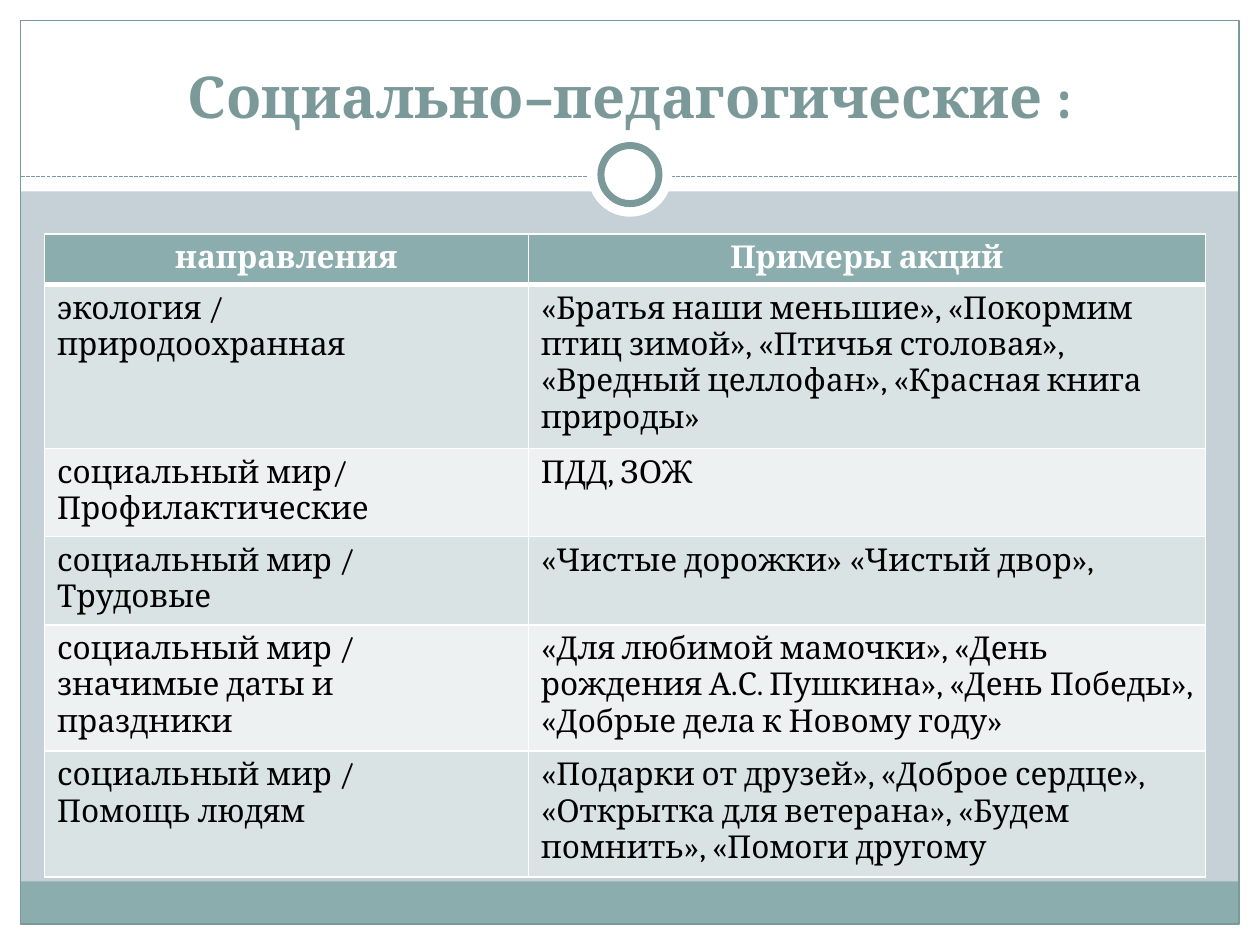
import pptx
import pptx.util
import pptx.dml.color
import pptx.enum.dml
import pptx.enum.shapes
import pptx.enum.text
import pptx.oxml
import pptx.oxml.ns
from pptx.util import Cm

RGBColor = pptx.dml.color.RGBColor
SHAPE = pptx.enum.shapes.MSO_SHAPE
ALIGN = pptx.enum.text.PP_ALIGN

WHITE = RGBColor(0xFF, 0xFF, 0xFF)
BLACK = RGBColor(0, 0, 0)
MIST = RGBColor(0xC5, 0xD1, 0xD7)
TEAL = RGBColor(0x8C, 0xAD, 0xAE)
DARK_TEAL = RGBColor(0x7C, 0x99, 0x9A)
BAND_DARK = RGBColor(0xDA, 0xE3, 0xE3)
BAND_LIGHT = RGBColor(0xEE, 0xF1, 0xF2)
FONT = "Cambria"

WIDTH, HEIGHT, MARGIN = 25.4, 19.05, 0.42
HEADERS = ("направления", "Примеры акций")
ACTIONS = [
    (("экология /", "природоохранная"),
     "«Братья наши меньшие», «Покормим птиц зимой», «Птичья столовая», "
     "«Вредный целлофан», «Красная книга природы»"),
    (("социальный мир/", "Профилактические"), "ПДД, ЗОЖ"),
    (("социальный мир /", "Трудовые"), "«Чистые дорожки» «Чистый двор»,"),
    (("социальный мир /", "значимые даты и праздники"),
     "«Для любимой мамочки», «День рождения А.С. Пушкина», «День Победы», "
     "«Добрые дела к Новому году»"),
    (("социальный мир /", "Помощь людям"),
     "«Подарки от друзей», «Доброе сердце», «Открытка для ветерана», "
     "«Будем помнить», «Помоги другому"),
]


def add_figure(s, kind, box, fill=None, line=None, weight=0.75):
    """Add a preset shape with a plain fill and outline."""
    sp = s.shapes.add_shape(kind, *map(Cm, box))
    sp.shadow.inherit = False
    if fill is None:
        sp.fill.background()
    else:
        sp.fill.solid()
        sp.fill.fore_color.rgb = fill
    if line is None:
        sp.line.fill.background()
    else:
        sp.line.color.rgb = line
        sp.line.width = pptx.util.Pt(weight)


def write_lines(tf, lines, size, color, bold=False, align=ALIGN.LEFT):
    """Write each line as a paragraph of one run."""
    for i, text in enumerate(lines):
        p = tf.add_paragraph() if i else tf.paragraphs[0]
        p.alignment = align
        r = p.add_run()
        r.text = text
        r.font.name = FONT
        r.font.size = pptx.util.Pt(size)
        r.font.bold = bold
        r.font.color.rgb = color


def add_frame(s, box, margin):
    """Draw white margins, the bottom band and the outline."""
    x, y, w, h = box
    band = 0.86
    for strip in ((x, y + h - margin, w, margin), (x, y, w, 3.86),
                  (x, y, margin, h), (x + w - margin, y, margin, h)):
        add_figure(s, SHAPE.RECTANGLE, strip, WHITE)
    inner = w - 2 * margin
    add_figure(s, SHAPE.RECTANGLE,
               (x + margin, y + h - margin - band, inner, band), TEAL)
    add_figure(s, SHAPE.RECTANGLE,
               (x + margin, y + margin, inner, h - 2 * margin), line=DARK_TEAL)


def add_divider(s, box):
    """Draw the dashed rule along the box middle with a ring at its centre."""
    x, y, w, h = box
    rule = s.shapes.add_connector(pptx.enum.shapes.MSO_CONNECTOR.STRAIGHT,
                                  Cm(x), Cm(y + h / 2 + 0.04),
                                  Cm(x + w), Cm(y + h / 2 + 0.04))
    rule.line.color.rgb = DARK_TEAL
    rule.line.width = pptx.util.Pt(0.75)
    rule.line.dash_style = pptx.enum.dml.MSO_LINE.SQUARE_DOT
    pptx.oxml.ns.qn("a:effectLst")
    rule._element.spPr.append(pptx.oxml.parse_xml(
        f"<a:effectLst {pptx.oxml.ns.nsdecls('a')}/>"))
    for size, line in ((h, None), (1.17, DARK_TEAL)):
        add_figure(s, SHAPE.OVAL,
                   (x + (w - size) / 2, y + (h - size) / 2, size, size),
                   WHITE, line, 4)


def add_title(s, box, text):
    """Place the centred heading at the bottom of its box."""
    tf = s.shapes.add_textbox(*map(Cm, box)).text_frame
    tf.word_wrap = True
    tf.vertical_anchor = pptx.enum.text.MSO_ANCHOR.BOTTOM
    write_lines(tf, [text], 33, DARK_TEAL, True, ALIGN.CENTER)


def style_cell(cell, fill, bottom, top):
    """Fill a cell and give it white borders."""
    cell.fill.solid()
    cell.fill.fore_color.rgb = fill
    tcPr = cell._tc.get_or_add_tcPr()
    weights = {"lnL": 1, "lnR": 1, "lnT": top, "lnB": bottom}
    for i, (side, weight) in enumerate(weights.items()):
        tcPr.insert(i, pptx.oxml.parse_xml(
            f'<a:{side} {pptx.oxml.ns.nsdecls("a")} w="{pptx.util.Pt(weight)}">'
            f'<a:solidFill><a:srgbClr val="{WHITE}"/></a:solidFill></a:{side}>'))


def add_actions_table(s, box):
    """Build the table of directions and example actions."""
    x, y, w, row_height = box
    count = len(ACTIONS) + 1
    table = s.shapes.add_table(count, 2, Cm(x), Cm(y), Cm(w),
                               Cm(row_height * count)).table
    first = 9.75
    for column, width in zip(table.columns, (first, w - first)):
        column.width = Cm(width)
    for j, text in enumerate(HEADERS):
        cell = table.cell(0, j)
        style_cell(cell, TEAL, 3, 1)
        write_lines(cell.text_frame, [text], 18, WHITE, True, ALIGN.CENTER)
    for i, (direction, examples) in enumerate(ACTIONS, 1):
        for j, lines in enumerate((direction, [examples])):
            cell = table.cell(i, j)
            style_cell(cell, BAND_DARK if i % 2 else BAND_LIGHT, 1,
                       3 if i == 1 else 1)
            write_lines(cell.text_frame, lines, 18, BLACK)


def main():
    """Build and save the slide."""
    prs = pptx.Presentation()
    prs.slide_width, prs.slide_height = Cm(WIDTH), Cm(HEIGHT)
    s = prs.slides.add_slide(prs.slide_layouts[6])
    s.background.fill.solid()
    s.background.fill.fore_color.rgb = MIST
    add_frame(s, (0, 0, WIDTH, HEIGHT), MARGIN)
    add_divider(s, (MARGIN, 2.67, WIDTH - 2 * MARGIN, 1.7))
    add_title(s, (0.85, 0.64, 23.7, 2.1), "Социально–педагогические :")
    add_actions_table(s, (0.9, 4.72, 23.4, 0.94))
    prs.save("out.pptx")


if __name__ == "__main__":
    main()
